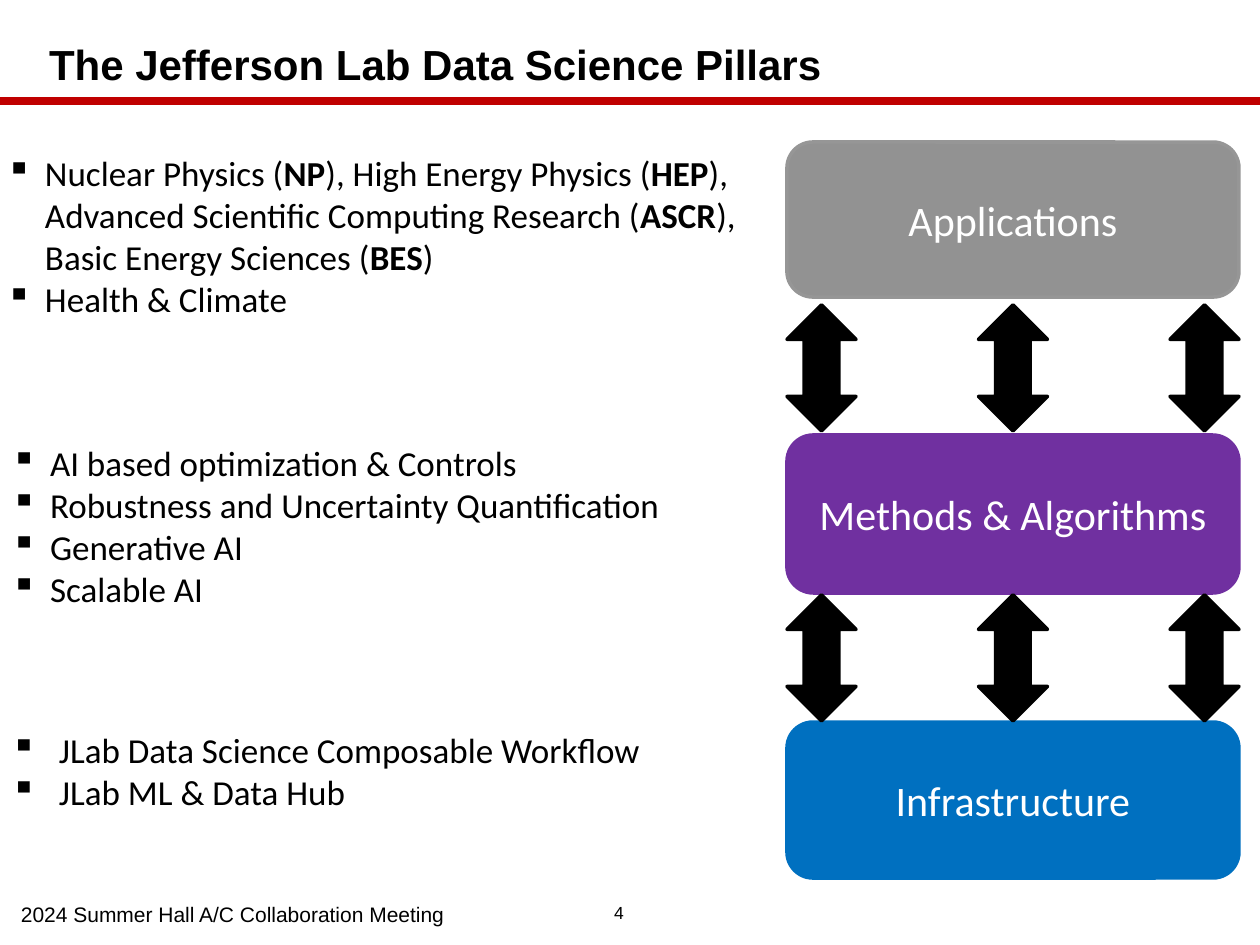
"""Build the Data Science Pillars slide."""
import lxml.etree
import pptx
import pptx.dml.color
import pptx.enum.shapes
import pptx.enum.text
import pptx.oxml.ns
import pptx.util

RGB = pptx.dml.color.RGBColor
BLACK, WHITE = RGB(0, 0, 0), RGB(0xFF, 0xFF, 0xFF)
RED = RGB(0xC0, 0x00, 0x00)
GRAY, GRAY_EDGE = RGB(0x92, 0x92, 0x92), RGB(0x96, 0x96, 0x96)
PURPLE, BLUE = RGB(0x70, 0x30, 0xA0), RGB(0x00, 0x70, 0xC0)
SHAPES = pptx.enum.shapes.MSO_SHAPE
ALIGN = pptx.enum.text.PP_ALIGN
MIDDLE = pptx.enum.text.MSO_ANCHOR.MIDDLE
TOP = pptx.enum.text.MSO_ANCHOR.TOP

TITLE = "The Jefferson Lab Data Science Pillars"
FOOTER = "2024 Summer Hall A/C Collaboration Meeting"
PAGE_NUMBER = "4"
PILLARS = [
    ("Applications", 142, 155, GRAY, GRAY_EDGE),
    ("Methods & Algorithms", 435, 158, PURPLE, PURPLE),
    ("Infrastructure", 722, 156, BLUE, BLUE),
]
BULLETS = [
    ((0, 145, 775, 183), 39, [
        "Nuclear Physics (*NP*), High Energy Physics (*HEP*), "
        "Advanced Scientific Computing Research (*ASCR*), "
        "Basic Energy Sciences (*BES*)",
        "Health & Climate",
    ]),
    ((5, 435, 725, 183), 39, [
        "AI based optimization & Controls",
        "Robustness and Uncertainty Quantification",
        "Generative AI",
        "Scalable AI",
    ]),
    ((5, 722, 643, 97), 48, [
        "JLab Data Science Composable Workflow",
        "JLab ML & Data Hub",
    ]),
]
PILLAR_LEFT, PILLAR_WIDTH = 787, 452
ARROW_WIDTH, ARROW_HEIGHT, ARROW_COLUMNS = 69, 126, 3
ARROW_TOPS = [305, 595]
INSET = 6


def emu(px):
    return pptx.util.Emu(round(px * 914400 / 126))


def style(para, font, size, color, bold=False):
    for span in para.runs:
        span.font.name = font
        span.font.size = pptx.util.Pt(size)
        span.font.color.rgb = color
        span.font.bold = bold


def add_box(page, area, anchor, wrap=True):
    frame = page.shapes.add_textbox(*map(emu, area)).text_frame
    frame.word_wrap = wrap
    frame.vertical_anchor = anchor
    frame.margin_left = frame.margin_right = emu(INSET)
    frame.margin_top = frame.margin_bottom = emu(INSET)
    return frame


def add_label(page, area, text, size, bold=False, wrap=True, align=ALIGN.LEFT):
    frame = add_box(page, area, MIDDLE, wrap)
    frame.text = text
    para = frame.paragraphs[0]
    para.alignment = align
    style(para, "Arial", size, BLACK, bold)
    return para


def add_block(page, kind, area, fill, edge):
    block = page.shapes.add_shape(kind, *map(emu, area))
    block.shadow.inherit = False
    block.fill.solid()
    block.fill.fore_color.rgb = fill
    block.line.color.rgb = edge
    block.line.width = pptx.util.Pt(2)
    return block


def add_bullets(page, area, indent, items):
    frame = add_box(page, area, TOP)
    for index, item in enumerate(items):
        para = frame.paragraphs[0] if index == 0 else frame.add_paragraph()
        props = para._p.get_or_add_pPr()
        props.set("marL", str(emu(indent)))
        props.set("indent", str(-emu(indent)))
        bullet = lxml.etree.SubElement(props, pptx.oxml.ns.qn("a:buChar"))
        bullet.set("char", "▪")
        for part in item.split("*"):
            para.add_run().text = part
        style(para, "Calibri", 20, BLACK)
        for span in para.runs[1::2]:
            span.font.bold = True


def add_rule(page):
    rule = page.shapes.add_connector(
        pptx.enum.shapes.MSO_CONNECTOR.STRAIGHT,
        *map(emu, (-1, 101, 1260, 101)))
    rule.line.color.rgb = RED
    rule.line.width = pptx.util.Pt(4.5)
    lxml.etree.SubElement(rule._element.spPr, pptx.oxml.ns.qn("a:effectLst"))


def main():
    deck = pptx.Presentation()
    deck.slide_width, deck.slide_height = emu(1260), emu(945)
    page = deck.slides.add_slide(deck.slide_layouts[6])

    add_rule(page)
    title = add_label(page, (43, 33, 1167, 67), TITLE, 24, bold=True)
    title.line_spacing = 0.9
    add_label(page, (602, 896, 34, 32), PAGE_NUMBER, 10, wrap=False,
              align=ALIGN.CENTER)

    for name, top, height, fill, edge in PILLARS:
        area = (PILLAR_LEFT, top, PILLAR_WIDTH, height)
        pillar = add_block(page, SHAPES.ROUNDED_RECTANGLE, area, fill, edge)
        frame = pillar.text_frame
        frame.text = name
        frame.vertical_anchor = MIDDLE
        frame.paragraphs[0].alignment = ALIGN.CENTER
        style(frame.paragraphs[0], "Calibri", 24, WHITE)

    step = (PILLAR_WIDTH - ARROW_WIDTH) / (ARROW_COLUMNS - 1)
    for top in ARROW_TOPS:
        for column in range(ARROW_COLUMNS):
            area = (PILLAR_LEFT + column * step, top, ARROW_WIDTH, ARROW_HEIGHT)
            add_block(page, SHAPES.UP_DOWN_ARROW, area, BLACK, BLACK)

    for area, indent, items in BULLETS:
        add_bullets(page, area, indent, items)
    add_label(page, (15, 895, 527, 38), FOOTER, 12)
    deck.save("out.pptx")


if __name__ == "__main__":
    main()
